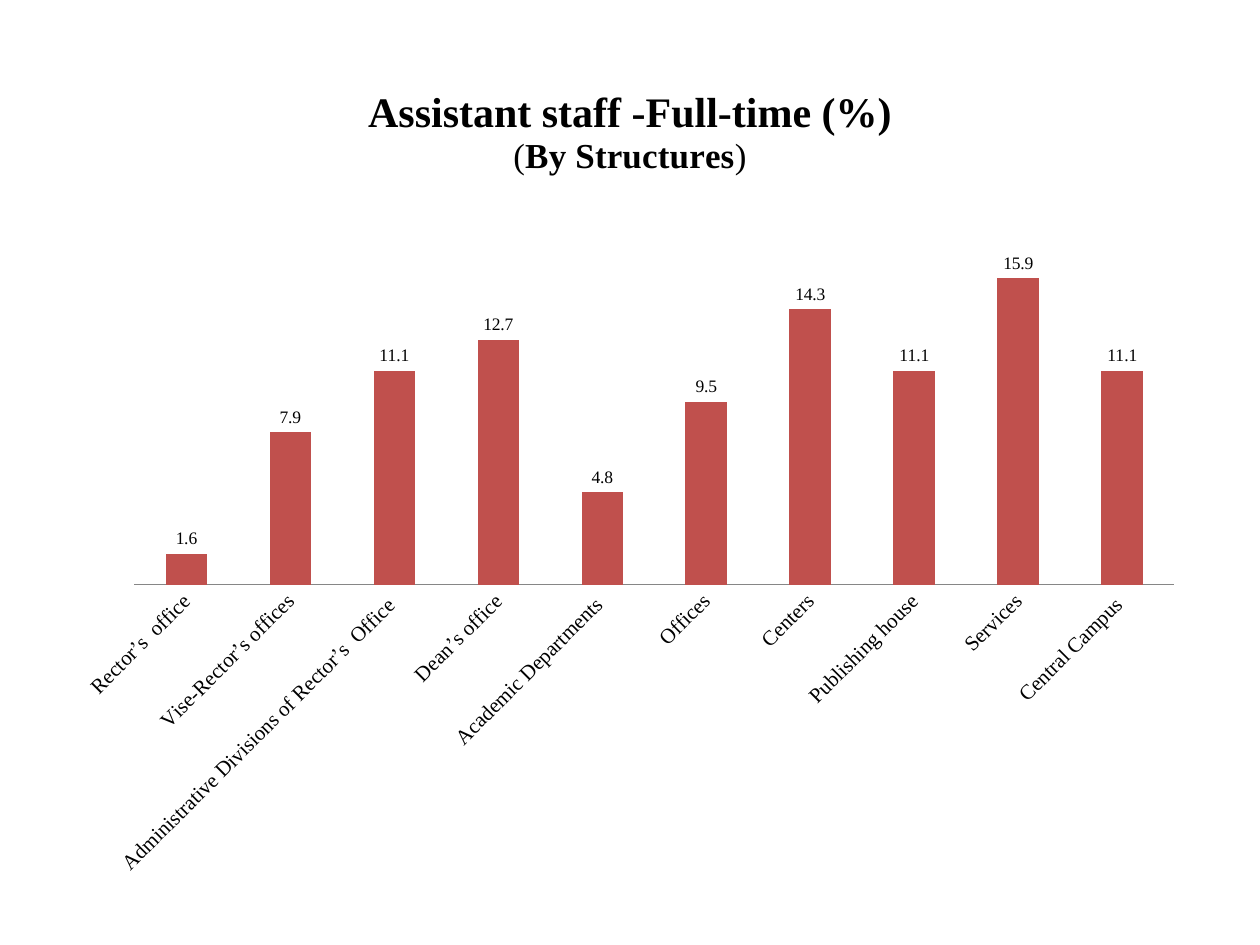
from dataclasses import dataclass

from lxml.etree import SubElement
from pptx import Presentation
from pptx.chart.data import CategoryChartData
from pptx.dml.color import RGBColor
from pptx.enum.chart import XL_CHART_TYPE, XL_LABEL_POSITION, XL_TICK_MARK
from pptx.oxml.ns import qn
from pptx.util import Pt


@dataclass(frozen=True)
class Theme:
    face: str = "Times New Roman"
    ink: str = "000000"
    bar: str = "C0504D"
    rule: str = "868686"
    head: int = 24
    sub: int = 20
    axis: int = 12
    label: int = 10


THEME = Theme()
STAFF = {
    "Rector’s  office": 1.6,
    "Vise-Rector’s offices": 7.9,
    " Administrative Divisions of Rector’s  Office ": 11.1,
    "Dean’s office": 12.7,
    "Academic Departments ": 4.8,
    "Offices": 9.5,
    "Centers": 14.3,
    "Publishing house": 11.1,
    "Services": 15.9,
    "Central Campus ": 11.1,
}


def style(font, size, bold=False):
    font.name = THEME.face
    font.size = Pt(size)
    font.bold = bold
    font.color.rgb = RGBColor.from_string(THEME.ink)


def write(para, text, **form):
    run = para.add_run()
    run.text = text
    style(run.font, **form)


def add_title(chart):
    frame = chart.chart_title.text_frame
    write(frame.paragraphs[0], "Assistant staff -Full-time (%)",
          size=THEME.head, bold=True)
    line = frame.add_paragraph()
    for text, bold in (("(", False), ("By Structures", True), (")", False)):
        write(line, text, size=THEME.sub, bold=bold)


def set_axes(chart):
    names = chart.category_axis
    names.major_tick_mark = XL_TICK_MARK.NONE
    names.format.line.color.rgb = RGBColor.from_string(THEME.rule)
    names.format.line.width = Pt(0.75)
    style(names.tick_labels.font, THEME.axis)
    turn = names._element.find(qn("c:txPr")).find(qn("a:bodyPr"))
    turn.set("rot", str(-45 * 60000))
    turn.set("vert", "horz")

    values = chart.value_axis
    values.visible = False
    values.has_major_gridlines = False
    values.minimum_scale, values.maximum_scale = 0, 18


def set_bars(plot):
    plot.gap_width = 150
    plot.overlap = -25
    plot.vary_by_categories = False
    series = plot.series[0]
    series.format.fill.solid()
    series.format.fill.fore_color.rgb = RGBColor.from_string(THEME.bar)
    plot.has_data_labels = True
    labels = plot.data_labels
    labels.show_value = True
    labels.number_format, labels.number_format_is_linked = "0.0", False
    labels.position = XL_LABEL_POSITION.OUTSIDE_END
    style(labels.font, THEME.label)


def place_plot(chart, **box):
    """Fix the inner plot area, in fractions of the chart."""
    area = chart._chartSpace.chart.plotArea
    for old in area.findall(qn("c:layout")):
        area.remove(old)
    layout = SubElement(area, qn("c:layout"))
    area.insert(0, layout)
    manual = SubElement(layout, qn("c:manualLayout"))
    parts = {"layoutTarget": "inner", "xMode": "edge", "yMode": "edge", **box}
    for name, value in parts.items():
        SubElement(manual, qn(f"c:{name}")).set("val", str(value))


def add_staff(slide, left, top, width, height):
    data = CategoryChartData()
    data.categories = list(STAFF)
    data.add_series("Series 1", list(STAFF.values()))
    chart = slide.shapes.add_chart(
        XL_CHART_TYPE.COLUMN_CLUSTERED,
        Pt(left), Pt(top), Pt(width), Pt(height), data).chart
    style(chart.font, THEME.label)
    chart.has_legend = False
    add_title(chart)
    set_axes(chart)
    set_bars(chart.plots[0])
    place_plot(chart, x=0.063, y=0.213, w=0.917, h=0.415)


def main():
    deck = Presentation()
    deck.slide_width, deck.slide_height = Pt(720), Pt(540)
    slide = deck.slides.add_slide(deck.slide_layouts[6])
    add_staff(slide, 36, 34, 648, 478)
    deck.save("out.pptx")


if __name__ == "__main__":
    main()
